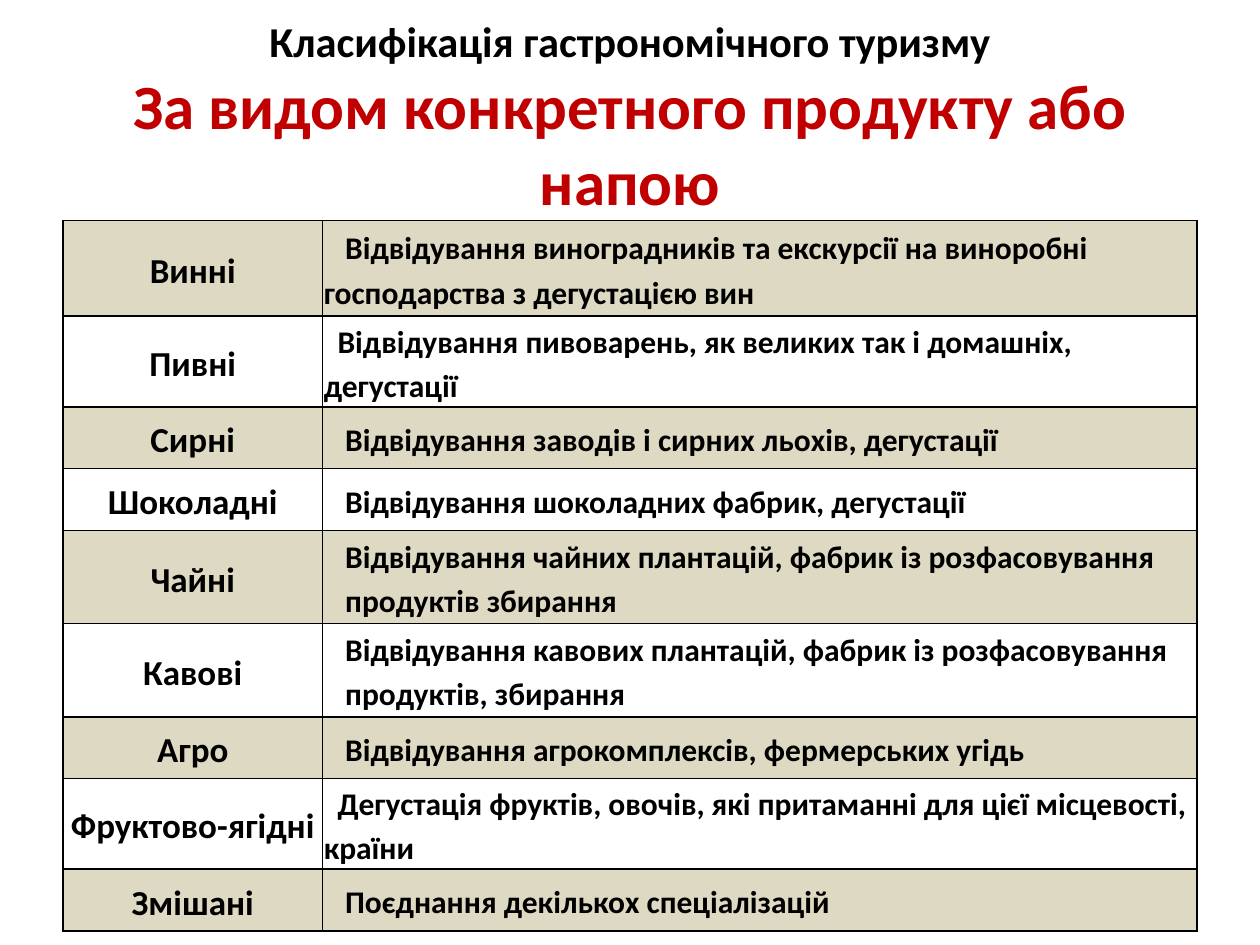
import pptx
import pptx.util
import pptx.dml.color
import pptx.enum.text
import pptx.oxml
import pptx.oxml.ns

Inches, Pt = pptx.util.Inches, pptx.util.Pt
RGBColor = pptx.dml.color.RGBColor
PP_ALIGN = pptx.enum.text.PP_ALIGN
MIDDLE = pptx.enum.text.MSO_ANCHOR.MIDDLE

BLACK = RGBColor(0x00, 0x00, 0x00)
RED = RGBColor(0xC0, 0x00, 0x00)
SAND = RGBColor(0xDD, 0xD9, 0xC3)
FONT = "Calibri"

TITLE = [
    ("Класифікація гастрономічного туризму", 24.3, BLACK),
    ("За видом конкретного продукту або напою", 36, RED),
]
# Kind, description, first-line indent, row height
ROWS = [
    ("Винні", "Відвідування виноградників та екскурсії на виноробні "
     "господарства з дегустацією вин", 0.17, 0.76),
    ("Пивні", "Відвідування пивоварень, як великих так і домашніх, дегустації",
     0.11, 0.72),
    ("Сирні", "Відвідування заводів і сирних льохів, дегустації", 0.17, 0.49),
    ("Шоколадні", "Відвідування шоколадних фабрик, дегустації", 0.17, 0.49),
    ("Чайні", "Відвідування чайних плантацій, фабрик із розфасовування\n"
     "продуктів збирання", 0.17, 0.74),
    ("Кавові", "Відвідування кавових плантацій, фабрик із розфасовування\n"
     "продуктів, збирання", 0.17, 0.74),
    ("Агро", "Відвідування агрокомплексів, фермерських угідь", 0.17, 0.49),
    ("Фруктово-ягідні", "Дегустація фруктів, овочів, які притаманні для цієї "
     "місцевості, країни", 0.11, 0.72),
    ("Змішані", "Поєднання декількох спеціалізацій", 0.17, 0.49),
]
COLS = [2.06, 6.94]


def style(para, size, color, align):
    para.alignment = align
    for run in para.runs:
        font = run.font
        font.name, font.size, font.bold = FONT, Pt(size), True
        font.color.rgb = color


def border(cell):
    props = cell._tc.get_or_add_tcPr()
    for i, side in enumerate(("lnL", "lnR", "lnT", "lnB")):
        line = pptx.oxml.parse_xml(
            f'<a:{side} {pptx.oxml.ns.nsdecls("a")} w="{Pt(1)}"><a:solidFill>'
            f'<a:srgbClr val="{BLACK}"/></a:solidFill></a:{side}>')
        props.insert(i, line)


def fill_cell(cell, text, size, align, shaded, indent=0):
    cell.margin_left = cell.margin_right = Inches(0.01)
    cell.margin_top = cell.margin_bottom = Inches(0.01)
    cell.vertical_anchor = MIDDLE
    if shaded:
        cell.fill.solid()
        cell.fill.fore_color.rgb = SAND
    else:
        cell.fill.background()
    cell.text_frame.text = text
    for para in cell.text_frame.paragraphs:
        style(para, size, BLACK, align)
        para.line_spacing = 1.15
        if indent:
            para._p.get_or_add_pPr().set("indent", str(Inches(indent)))
    border(cell)


def main():
    deck = pptx.Presentation()
    deck.slide_width, deck.slide_height = Inches(10), Inches(7.5)
    slide = deck.slides.add_slide(deck.slide_layouts[6])

    # Title
    box = slide.shapes.add_textbox(
        Inches(0.2), Inches(0.3), Inches(9.6), Inches(1.25))
    frame = box.text_frame
    frame.word_wrap = True
    frame.vertical_anchor = MIDDLE
    frame.text = "\n".join(text for text, size, color in TITLE)
    for para, (text, size, color) in zip(frame.paragraphs, TITLE):
        style(para, size, color, PP_ALIGN.CENTER)

    # Table of tourism kinds
    high = sum(row[-1] for row in ROWS)
    table = slide.shapes.add_table(
        len(ROWS), len(COLS), Inches(0.5), Inches(1.75),
        Inches(sum(COLS)), Inches(high)).table
    table.first_row = table.horz_banding = False
    for col, width in zip(table.columns, COLS):
        col.width = Inches(width)
    for i, (kind, text, indent, height) in enumerate(ROWS):
        table.rows[i].height = Inches(height)
        shaded = i % 2 == 0
        fill_cell(table.cell(i, 0), kind, 20, PP_ALIGN.CENTER, shaded)
        fill_cell(table.cell(i, 1), text, 18, PP_ALIGN.LEFT, shaded, indent)

    deck.save("out.pptx")


if __name__ == "__main__":
    main()
